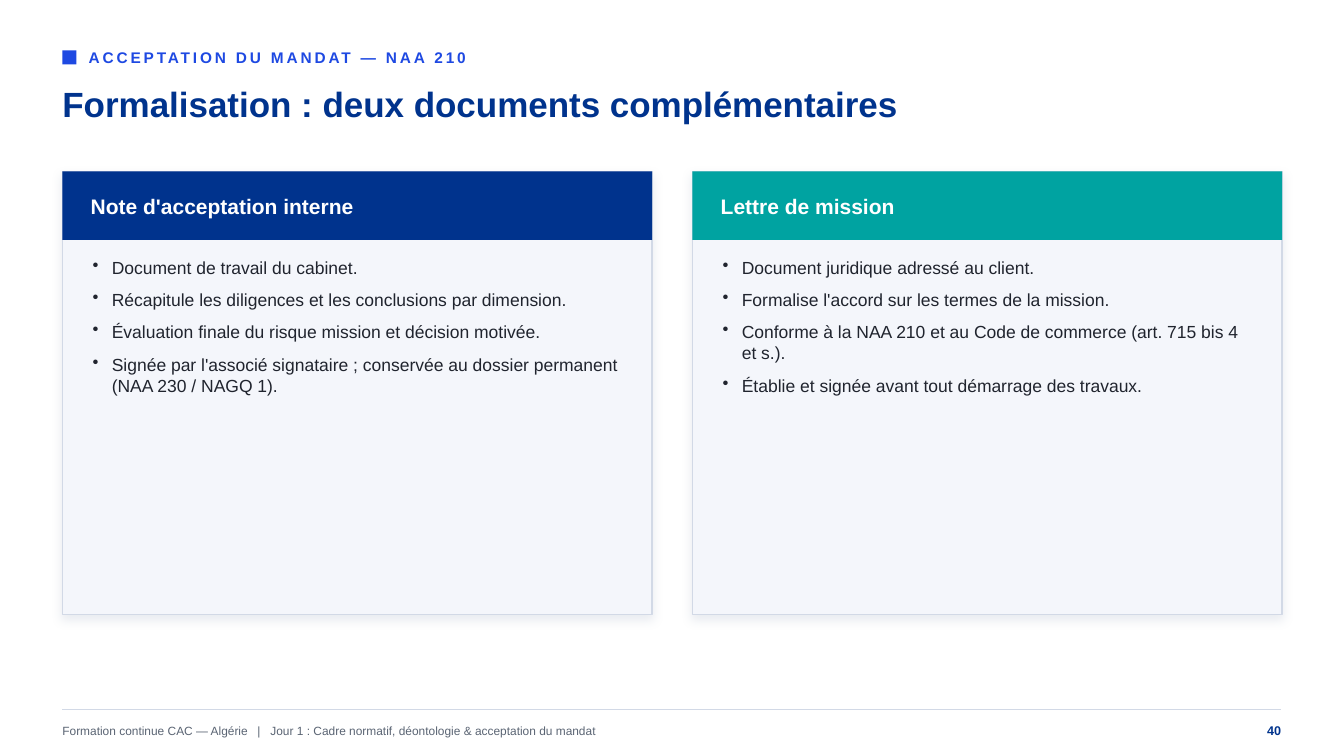
"""Build the slide on the two documents that formalise an engagement."""
from dataclasses import dataclass

from lxml import etree
from pptx import Presentation, oxml
from pptx.dml import color
from pptx.enum import shapes, text
from pptx.oxml import ns
from pptx.util import Pt


@dataclass(frozen=True)
class Theme:
    """Hold the font, colours and type sizes."""
    font: str = "Arial"
    blue: str = "1E49E2"
    navy: str = "00338D"
    teal: str = "00A3A1"
    panel: str = "F4F6FB"
    rule: str = "D2D9E6"
    shade: str = "9AA7BD"
    ink: str = "20242E"
    grey: str = "5A6473"
    white: str = "FFFFFF"
    label: float = 11
    title: float = 25
    head: float = 15
    body: float = 12.5
    foot: float = 8.5
    page: float = 9


class Deck:
    """Draw styled elements on the current slide."""

    def __init__(self, theme, width, height):
        """Open a presentation with one blank slide."""
        self.theme = theme
        self.prs = Presentation()
        self.prs.slide_width, self.prs.slide_height = Pt(width), Pt(height)
        self.slide = self.prs.slides.add_slide(self.prs.slide_layouts[6])

    def rgb(self, name):
        """Return a theme colour by name."""
        return color.RGBColor.from_string(getattr(self.theme, name))

    def rect(self, box, fill, line=None):
        """Add a filled rectangle, outlined if a line colour is given."""
        shape = self.slide.shapes.add_shape(
            shapes.MSO_SHAPE.RECTANGLE, *map(Pt, box))
        shape.shadow.inherit = False
        shape.fill.solid()
        shape.fill.fore_color.rgb = self.rgb(fill)
        if line:
            shape.line.color.rgb = self.rgb(line)
            shape.line.width = Pt(1)
        else:
            shape.line.fill.background()
        return shape

    def shadow(self, shape):
        """Give a shape a soft shadow below it."""
        effects = shape._element.spPr.find(ns.qn("a:effectLst"))
        effects.append(oxml.parse_xml(
            f'<a:outerShdw {ns.nsdecls("a")} blurRad="{Pt(7)}" '
            f'dist="{Pt(3)}" dir="5400000" algn="t" rotWithShape="0">'
            f'<a:srgbClr val="{self.theme.shade}"><a:alpha val="22000"/>'
            '</a:srgbClr></a:outerShdw>'))

    def text(self, box, lines, size, tint, bold=False, track=0, bullet=False,
             tabs=(), align=text.PP_ALIGN.LEFT,
             anchor=text.MSO_ANCHOR.MIDDLE):
        """Add a text box with one paragraph per line."""
        frame = self.slide.shapes.add_textbox(*map(Pt, box)).text_frame
        layout = dict(word_wrap=True, vertical_anchor=anchor, margin_left=0,
                      margin_right=0, margin_top=0, margin_bottom=0)
        for key, value in layout.items():
            setattr(frame, key, value)
        style = dict(name=self.theme.font, bold=bold,
                     size=Pt(getattr(self.theme, size)))
        for i, line in enumerate(lines):
            para = frame.add_paragraph() if i else frame.paragraphs[0]
            if bullet:
                self.bullet(para)
            if tabs:
                self.tabs(para, tabs)
            para.alignment = align
            run = para.add_run()
            run.text = line
            for key, value in style.items():
                setattr(run.font, key, value)
            run.font.color.rgb = self.rgb(tint)
            if track:
                run._r.get_or_add_rPr().set("spc", str(track * 100))

    def bullet(self, para):
        """Give a paragraph a hanging bullet and space after."""
        props = para._p.get_or_add_pPr()
        props.set("marL", str(Pt(13.7)))
        props.set("indent", str(Pt(-13.7)))
        etree.SubElement(props, ns.qn("a:buChar"), char="•")
        para.space_after = Pt(8)

    def tabs(self, para, stops):
        """Set left tab stops on a paragraph."""
        group = etree.SubElement(
            para._p.get_or_add_pPr(), ns.qn("a:tabLst"))
        for stop in stops:
            etree.SubElement(
                group, ns.qn("a:tab"), pos=str(Pt(stop)), algn="l")

    def rule(self, left, right, top):
        """Add a thin level line."""
        line = self.slide.shapes.add_connector(
            shapes.MSO_CONNECTOR.STRAIGHT, *map(Pt, (left, top, right, top)))
        line.line.color.rgb = self.rgb("rule")
        line.line.width = Pt(1)
        etree.SubElement(line._element.spPr, ns.qn("a:effectLst"))

    def card(self, left, tint, head, points):
        """Add a panel with a coloured header and a bullet list."""
        top, width, band = 122.4, 421.2, 49
        panel = self.rect((left, top, width, 316.8), "panel", "rule")
        self.shadow(panel)
        self.rect((left, top, width, band), tint)
        self.text((left + 20.2, top, 385.2, band), [head], "head", "white",
                  bold=True)
        self.text((left + 21.6, top + 61.2, 378, 244.8), points, "body", "ink",
                  bullet=True, anchor=text.MSO_ANCHOR.TOP)


CARDS = [
    ("navy", "Note d'acceptation interne", [
        "Document de travail du cabinet.",
        "Récapitule les diligences et les conclusions par dimension.",
        "Évaluation finale du risque mission et décision motivée.",
        "Signée par l'associé signataire ; conservée au dossier permanent "
        "(NAA 230 / NAGQ 1).",
    ]),
    ("teal", "Lettre de mission", [
        "Document juridique adressé au client.",
        "Formalise l'accord sur les termes de la mission.",
        "Conforme à la NAA 210 et au Code de commerce "
        "(art. 715 bis 4 et s.).",
        "Établie et signée avant tout démarrage des travaux.",
    ]),
]


def main():
    """Compose and save the slide."""
    deck = Deck(Theme(), 960, 540)
    left, right = 44.6, 915.1
    deck.rect((left, 36, 10.1, 10.1), "blue")
    deck.text((63.4, 31, 864, 20.2), ["ACCEPTATION DU MANDAT — NAA 210"],
              "label", "blue", bold=True, track=2)
    deck.text((left, 51.8, 871.2, 44.6),
              ["Formalisation : deux documents complémentaires"],
              "title", "navy", bold=True)
    for i, card in enumerate(CARDS):
        deck.card(left + 450 * i, *card)
    deck.rule(left, right, 506.9)
    deck.text((left, 511.2, 756, 21.6),
              ["Formation continue CAC — Algérie\t|\tJour 1 : Cadre normatif, "
               "déontologie & acceptation du mandat"],
              "foot", "grey", tabs=(139.3, 148.6))
    deck.text((right - 72, 511.2, 72, 21.6), ["40"], "page", "navy",
              bold=True, align=text.PP_ALIGN.RIGHT)
    deck.prs.save("out.pptx")


if __name__ == "__main__":
    main()
